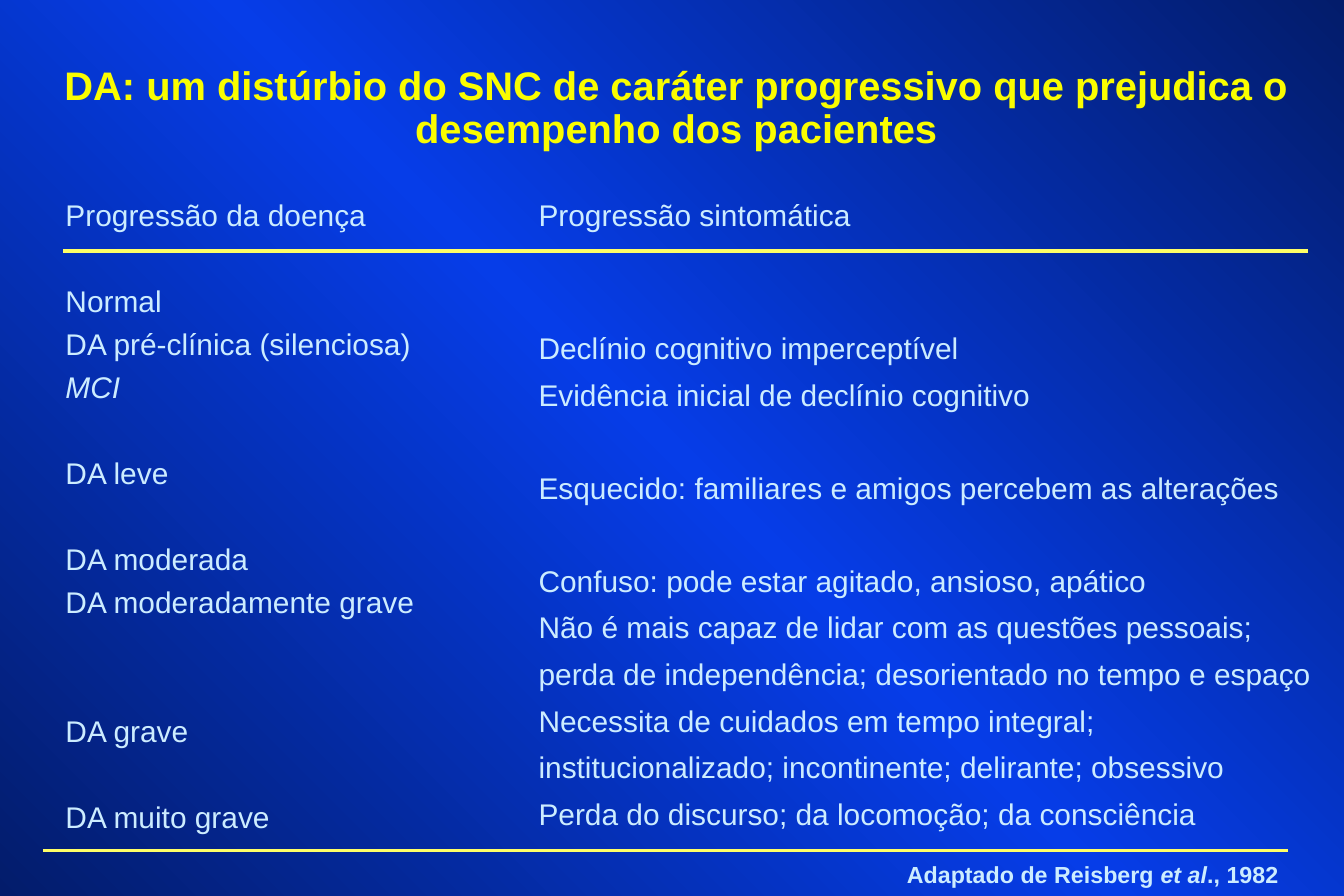
from copy import deepcopy
from dataclasses import dataclass

from lxml.etree import SubElement
from pptx import Presentation
from pptx.dml.color import RGBColor
from pptx.enum.shapes import MSO_CONNECTOR as Connector
from pptx.enum.text import MSO_ANCHOR as Anchor, PP_ALIGN as Align
from pptx.oxml.ns import qn
from pptx.slide import Slide
from pptx.text.text import TextFrame
from pptx.util import Inches, Pt


@dataclass(frozen=True)
class Theme:
    font: str = "Arial"
    title: str = "FAFD00"
    body: str = "CCECFF"
    rule: str = "FFFF66"
    backdrop: tuple = ("031C6B", "063DE8", "031C6B")
    title_size: int = 24
    body_size: int = 18
    source_size: int = 14
    rule_width: float = 2.25
    line_height: float = 1.2  # natural line height of the font, in ems


@dataclass(frozen=True)
class Row:
    text: str
    gap: float = 0  # blank lines above, as a multiple of the type size
    italic: bool = False
    spacing: float = 1.2


@dataclass(frozen=True)
class Column:
    left: float
    width: float
    rows: tuple[Row, ...]


@dataclass(frozen=True)
class Rule:
    left: float
    top: float


THEME = Theme()
COLUMN_TOP, COLUMN_HEIGHT = 1.54, 5.55
RULE_LENGTH = 10.42
RULES = (Rule(0.53, 2.1), Rule(0.36, 7.12))

STAGES = Column(0.45, 4.17, (
    Row("Progressão da doença"),
    Row("Normal", gap=1.2),
    Row("DA pré-clínica (silenciosa)"),
    Row("MCI", italic=True),
    Row("DA leve", gap=1.2),
    Row("DA moderada", gap=1.2),
    Row("DA moderadamente grave"),
    Row("DA grave", gap=2.4),
    Row("DA muito grave", gap=1.2),
))
SYMPTOMS = Column(4.41, 6.84, (
    Row("Progressão sintomática"),
    Row("Declínio cognitivo imperceptível", gap=2.4, spacing=1.3),
    Row("Evidência inicial de declínio cognitivo", spacing=1.3),
    Row("Esquecido: familiares e amigos percebem as alterações", gap=1.3, spacing=1.3),
    Row("Confuso: pode estar agitado, ansioso, apático", gap=1.3, spacing=1.3),
    Row("Não é mais capaz de lidar com as questões pessoais; "
        "perda de independência; desorientado no tempo e espaço", spacing=1.3),
    Row("Necessita de cuidados em tempo integral; "
        "institucionalizado; incontinente; delirante; obsessivo", spacing=1.3),
    Row("Perda do discurso; da locomoção; da consciência", spacing=1.3),
))


def write(paragraph, text: str, *, size: int = THEME.body_size, color: str = THEME.body,
          bold: bool = False, italic: bool = False) -> None:
    run = paragraph.add_run()
    run.text = text
    run.font.name = THEME.font
    run.font.size = Pt(size)
    run.font.bold = bold
    run.font.italic = italic
    run.font.color.rgb = RGBColor.from_string(color)


def add_frame(slide: Slide, left: float, top: float, width: float, height: float,
              wrap: bool = True) -> TextFrame:
    box = slide.shapes.add_textbox(Inches(left), Inches(top), Inches(width), Inches(height))
    box.text_frame.word_wrap = wrap
    return box.text_frame


def paint_background(slide: Slide) -> None:
    fill = slide.background.fill
    fill.gradient()
    fill.gradient_angle = 45
    stop_list = slide.element.find(".//" + qn("a:gsLst"))
    stop_list.append(deepcopy(stop_list[-1]))
    for index, (stop, color) in enumerate(zip(fill.gradient_stops, THEME.backdrop)):
        stop.position = index / 2
        stop.color.rgb = RGBColor.from_string(color)


def add_title(slide: Slide, text: str) -> None:
    title = slide.shapes.title
    title.left, title.top = Inches(0.09), Inches(0.07)
    title.width, title.height = Inches(11.14), Inches(1.25)
    title.text_frame.vertical_anchor = Anchor.BOTTOM
    title.text_frame.word_wrap = True
    paragraph = title.text_frame.paragraphs[0]
    paragraph.alignment = Align.CENTER
    paragraph.line_spacing = 0.9
    write(paragraph, text, size=THEME.title_size, color=THEME.title, bold=True)


def add_column(slide: Slide, column: Column) -> None:
    frame = add_frame(slide, column.left, COLUMN_TOP, column.width, COLUMN_HEIGHT)
    for index, row in enumerate(column.rows):
        paragraph = frame.add_paragraph() if index else frame.paragraphs[0]
        paragraph.line_spacing = row.spacing
        paragraph.space_before = Pt(row.gap * THEME.body_size * THEME.line_height)
        write(paragraph, row.text, italic=row.italic)


def add_rule(slide: Slide, rule: Rule) -> None:
    line = slide.shapes.add_connector(
        Connector.STRAIGHT, Inches(rule.left), Inches(rule.top),
        Inches(rule.left + RULE_LENGTH), Inches(rule.top))
    line.line.color.rgb = RGBColor.from_string(THEME.rule)
    line.line.width = Pt(THEME.rule_width)
    SubElement(line.element.spPr, qn("a:effectLst"))


def add_source(slide: Slide) -> None:
    paragraph = add_frame(slide, 7.1, 7.15, 3.7, 0.33, wrap=False).paragraphs[0]
    paragraph.alignment = Align.RIGHT
    for text, italic in (("Adaptado de Reisberg ", False), ("et al", True), ("., 1982", False)):
        write(paragraph, text, size=THEME.source_size, bold=True, italic=italic)


def main() -> None:
    deck = Presentation()
    deck.slide_width, deck.slide_height = Inches(11.25), Inches(7.5)
    title_only = deck.slide_layouts[5]
    slide = deck.slides.add_slide(title_only)
    paint_background(slide)

    # Heading
    add_title(slide, "DA: um distúrbio do SNC de caráter progressivo "
                     "que prejudica o desempenho dos pacientes")

    # Stages and their symptoms
    for column in (STAGES, SYMPTOMS):
        add_column(slide, column)

    # Rules under the column heads and above the source
    for rule in RULES:
        add_rule(slide, rule)
    add_source(slide)

    deck.save("out.pptx")


if __name__ == "__main__":
    main()
